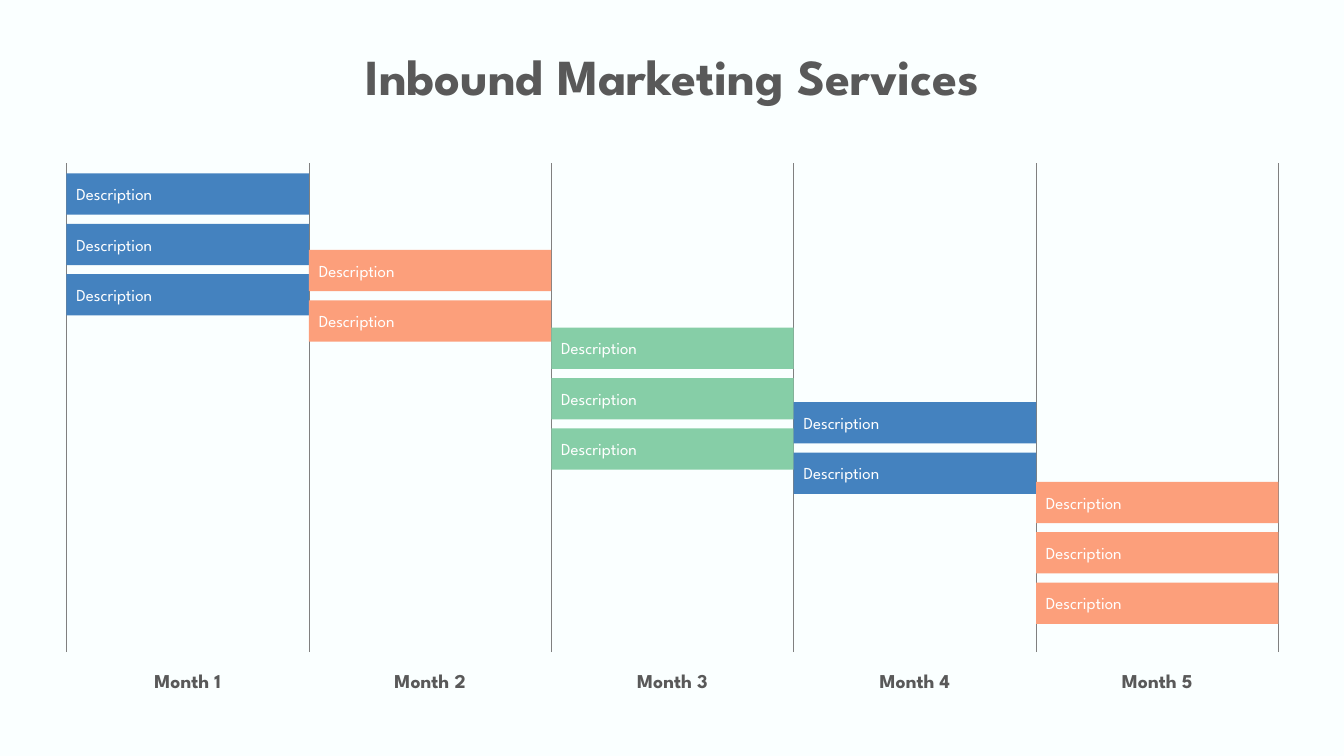
"""Build the month-by-month plan of inbound marketing services."""
from dataclasses import dataclass

from pptx import Presentation
from pptx.dml.color import RGBColor
from pptx.enum import shapes, text
from pptx.oxml import ns
from pptx.util import Inches, Pt
from lxml import etree

TITLE = "Inbound Marketing Services"
MONTHS = [
    ("Month 1", "blue", 1.72, ["Description", "Description", "Description"]),
    ("Month 2", "coral", 2.48, ["Description", "Description"]),
    ("Month 3", "green", 3.25, ["Description", "Description", "Description"]),
    ("Month 4", "blue", 3.99, ["Description", "Description"]),
    ("Month 5", "coral", 4.78, ["Description", "Description", "Description"]),
]


@dataclass(frozen=True)
class Theme:
    font: str = "League Spartan"
    background: str = "FAFFFF"
    dark: str = "595959"
    light: str = "FFFFFF"
    rule: str = "808080"
    blue: str = "4482BF"
    coral: str = "FC9F7B"
    green: str = "86CEA7"
    title_size: int = 36
    month_size: int = 14
    bar_size: int = 12


THEME = Theme()
CHART_LEFT, CHART_RIGHT = 0.66, 12.68
RULE_TOP, RULE_BOTTOM = 1.62, 6.47
COLUMN_WIDTH = (CHART_RIGHT - CHART_LEFT) / len(MONTHS)
BAR_HEIGHT, BAR_PITCH = 0.41, 0.5
LABEL_TOP, LABEL_WIDTH, LABEL_HEIGHT = 6.59, 1.39, 0.34


def box(left, top, width, height):
    return [Inches(value) for value in (left, top, width, height)]


def write(shape, content, *, size, color=THEME.dark, bold=False,
          align=text.PP_ALIGN.CENTER, anchor=text.MSO_ANCHOR.TOP,
          fit=text.MSO_AUTO_SIZE.SHAPE_TO_FIT_TEXT):
    frame = shape.text_frame
    frame.word_wrap = True
    frame.auto_size = fit
    frame.vertical_anchor = anchor
    paragraph = frame.paragraphs[0]
    paragraph.alignment = align
    run = paragraph.add_run()
    run.text = content
    run.font.name = THEME.font
    run.font.size = Pt(size)
    run.font.bold = bold
    run.font.color.rgb = RGBColor.from_string(color)


def add_rule(slide, x):
    rule = slide.shapes.add_connector(
        shapes.MSO_CONNECTOR.STRAIGHT,
        Inches(x), Inches(RULE_BOTTOM), Inches(x), Inches(RULE_TOP))
    rule.line.color.rgb = RGBColor.from_string(THEME.rule)
    rule.line.width = Pt(0.5)
    etree.SubElement(rule._element.spPr, ns.qn("a:effectLst"))


def add_bar(slide, left, top, content, color):
    bar = slide.shapes.add_shape(
        shapes.MSO_SHAPE.RECTANGLE, *box(left, top, COLUMN_WIDTH, BAR_HEIGHT))
    bar.shadow.inherit = False
    bar.fill.solid()
    bar.fill.fore_color.rgb = RGBColor.from_string(color)
    bar.line.fill.background()
    write(bar, content, size=THEME.bar_size, color=THEME.light,
          align=text.PP_ALIGN.LEFT, anchor=text.MSO_ANCHOR.MIDDLE,
          fit=text.MSO_AUTO_SIZE.NONE)


def add_month(slide, left, name, color, first_top, services):
    label = slide.shapes.add_textbox(
        *box(left + (COLUMN_WIDTH - LABEL_WIDTH) / 2, LABEL_TOP,
             LABEL_WIDTH, LABEL_HEIGHT))
    write(label, name, size=THEME.month_size, bold=True)
    for row, service in enumerate(services):
        add_bar(slide, left, first_top + row * BAR_PITCH, service, color)


def main():
    presentation = Presentation()
    presentation.slide_width = Inches(13.33)
    presentation.slide_height = Inches(7.5)
    slide = presentation.slides.add_slide(presentation.slide_layouts[5])
    slide.background.fill.solid()
    slide.background.fill.fore_color.rgb = RGBColor.from_string(THEME.background)

    title = slide.shapes.title
    title.left, title.top, title.width, title.height = box(0.71, 0.4, 11.92, 0.71)
    write(title, TITLE, size=THEME.title_size, bold=True)

    edges = [CHART_LEFT + column * COLUMN_WIDTH for column in range(len(MONTHS) + 1)]
    for x in edges:
        add_rule(slide, x)
    for left, (name, color, first_top, services) in zip(edges, MONTHS):
        add_month(slide, left, name, getattr(THEME, color), first_top, services)

    presentation.save("out.pptx")


if __name__ == "__main__":
    main()
